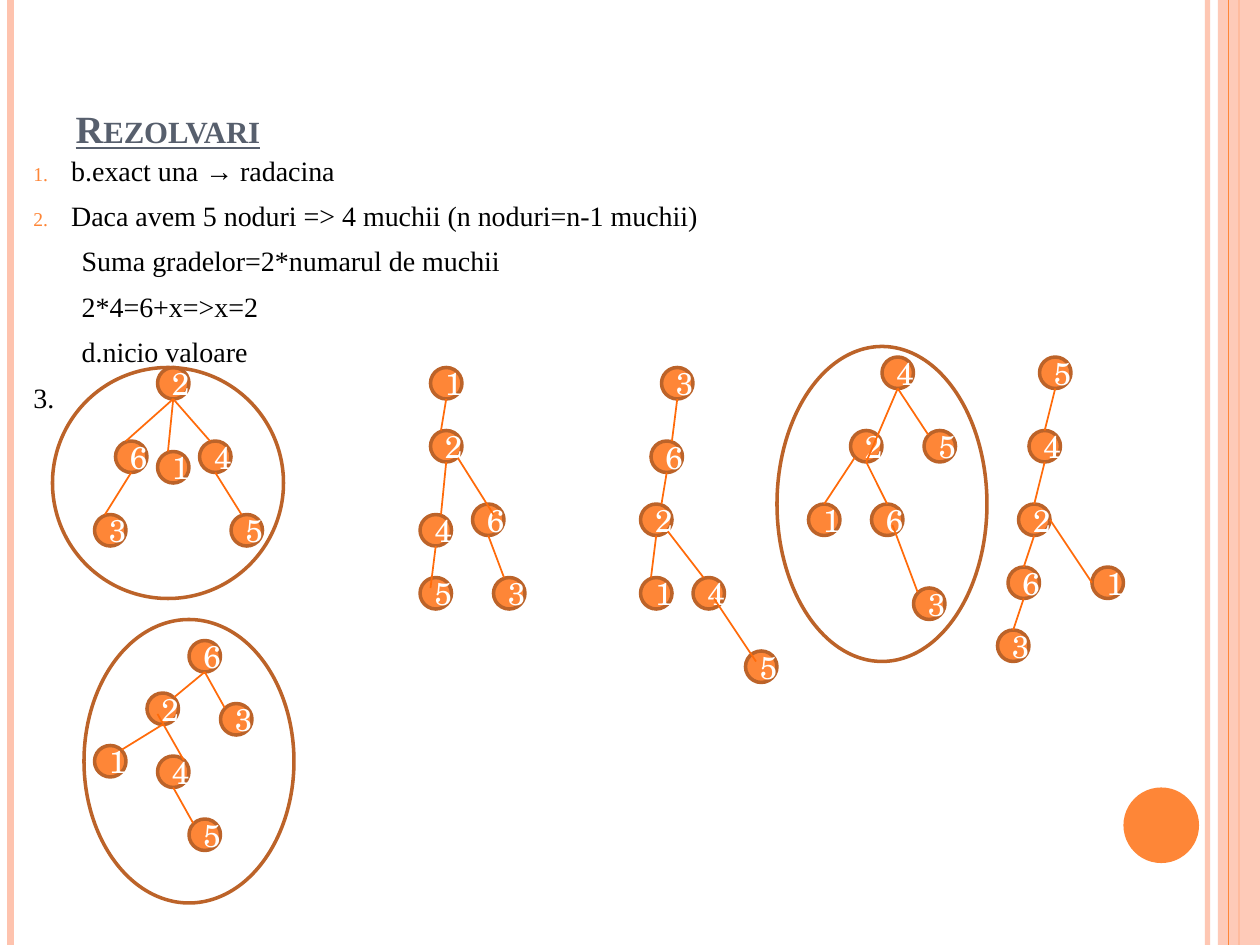
from lxml import etree
from pptx import Presentation
from pptx.dml.color import RGBColor
from pptx.enum.shapes import MSO_CONNECTOR, MSO_SHAPE
from pptx.enum.text import MSO_ANCHOR, PP_ALIGN
from pptx.oxml.ns import qn
from pptx.util import Pt

PX = 7620  # 120 px to the inch
STRAIGHT = MSO_CONNECTOR.STRAIGHT
ELLIPSE, RECTANGLE = MSO_SHAPE.OVAL, MSO_SHAPE.RECTANGLE
ORANGE, PEACH, BROWN, EDGE = "FE8637", "FEC3AE", "BC6329", "FF6B0A"
NODE = 30
SERIF, DIGITS = "Times New Roman", "TeX Gyre Schola"

prs = Presentation()
prs.slide_width, prs.slide_height = 1200 * PX, 900 * PX
slide = prs.slides.add_slide(prs.slide_layouts[5])


def draw_line(x1, y1, x2, y2, color, width):
    line = slide.shapes.add_connector(STRAIGHT, x1 * PX, y1 * PX, x2 * PX, y2 * PX)
    line.line.color.rgb = RGBColor.from_string(color)
    line.line.width = Pt(width)
    etree.SubElement(line._element.spPr, qn("a:effectLst"))
    return line


def draw_shape(kind, x, y, width, height, fill=None, outline=None):
    shape = slide.shapes.add_shape(kind, x * PX, y * PX, width * PX, height * PX)
    shape.shadow.inherit = False
    if fill:
        shape.fill.solid()
        shape.fill.fore_color.rgb = RGBColor.from_string(fill)
    else:
        shape.fill.background()
    if outline:
        shape.line.color.rgb = RGBColor.from_string(outline)
        shape.line.width = Pt(2)
    else:
        shape.line.fill.background()
    return shape


# Side stripes and corner disc
inner_stripe = draw_line(1150, 0, 1150, 900, PEACH, 3)
draw_line(10, 0, 10, 900, PEACH, 4.5)
draw_line(1180, 0, 1180, 900, ORANGE, 1.5)
band = draw_shape(RECTANGLE, 1160, 0, 40, 900, PEACH)
draw_line(1170, 0, 1170, 900, ORANGE, 0.75)
draw_shape(ELLIPSE, 1070, 750, 72, 72, ORANGE)
for stripe, opacity in ((inner_stripe, 93), (band, 87)):
    color = stripe._element.spPr.find(".//" + qn("a:srgbClr"))
    etree.SubElement(color, qn("a:alpha"), val=str(opacity * 1000))

# Title
title = slide.shapes.title
title.left, title.top, title.width, title.height = 60 * PX, 0, 1080 * PX, 150 * PX
title.text_frame.text = "Rezolvari"
title.text_frame.vertical_anchor = MSO_ANCHOR.BOTTOM
heading = title.text_frame.paragraphs[0]
heading.alignment = PP_ALIGN.LEFT
heading_font = heading.runs[0].font
heading_font.name, heading_font.size = SERIF, Pt(22)
heading_font.bold = heading_font.underline = True
heading_font.color.rgb = RGBColor.from_string("575F6D")
heading.runs[0]._r.get_or_add_rPr().set("cap", "small")

# Answers: text, left margin, first-line indent, numbered
answers = [
    ("b.exact una → radacina", 36, -36, True),
    ("Daca avem 5 noduri => 4 muchii (n noduri=n-1 muchii)", 36, -36, True),
    ("Suma gradelor=2*numarul de muchii", 46, 0, False),
    ("2*4=6+x=>x=2", 46, 0, False),
    ("d.nicio valoare", 46, 0, False),
    ("3.", 36, -36, False),
]
body = slide.shapes.add_textbox(20 * PX, 140 * PX, 1120 * PX, 740 * PX).text_frame
body.word_wrap = True
for index, (text, margin, indent, numbered) in enumerate(answers):
    answer = body.add_paragraph() if index else body.paragraphs[0]
    answer.text = text
    if index:
        answer.space_before = Pt(6.75)
    properties = answer._p.get_or_add_pPr()
    properties.set("marL", str(margin * PX))
    properties.set("indent", str(indent * PX))
    if numbered:
        number_color = etree.SubElement(properties, qn("a:buClr"))
        etree.SubElement(number_color, qn("a:srgbClr"), val=ORANGE)
        etree.SubElement(properties, qn("a:buSzPct"), val="70000")
        etree.SubElement(properties, qn("a:buFont"), typeface=SERIF)
        etree.SubElement(properties, qn("a:buAutoNum"), type="arabicPeriod")
    font = answer.runs[0].font
    font.name, font.size = SERIF, Pt(16)
    font.color.rgb = RGBColor.from_string("000000")

# Trees: nodes as (label, left, top), edges as (x1, y1, x2, y2)
trees = [
    ([(2, 150, 350), (6, 110, 420), (1, 150, 430), (4, 190, 420), (5, 220, 490),
      (3, 90, 490)],
     [(165, 380, 120, 420), (165, 380, 160, 430), (165, 380, 200, 420),
      (125, 450, 100, 490), (205, 450, 230, 490)]),
    ([(1, 410, 350), (2, 410, 410), (4, 400, 490), (6, 450, 480), (5, 400, 550),
      (3, 470, 550)],
     [(425, 380, 420, 410), (425, 440, 420, 490), (436, 436, 470, 490),
      (415, 520, 410, 560), (465, 510, 480, 550)]),
    ([(3, 630, 350), (6, 620, 420), (5, 710, 620), (1, 610, 550), (2, 610, 480),
      (4, 660, 550)],
     [(645, 380, 640, 420), (635, 450, 630, 480), (625, 510, 620, 550),
      (636, 506, 670, 550), (680, 570, 720, 630)]),
    ([(4, 840, 340), (1, 770, 480), (5, 880, 410), (2, 810, 410), (6, 830, 480),
      (3, 870, 560)],
     [(855, 370, 825, 440), (855, 370, 884, 414), (825, 440, 845, 480),
      (814, 436, 785, 480), (850, 500, 874, 564)]),
    ([(5, 990, 340), (4, 980, 410), (2, 970, 480), (1, 1040, 540), (3, 950, 600),
      (6, 960, 540)],
     [(1005, 370, 995, 410), (995, 440, 985, 480), (985, 510, 975, 540),
      (975, 570, 965, 600), (1000, 495, 1040, 555)]),
    ([(6, 180, 610), (2, 140, 660), (3, 210, 670), (4, 150, 720), (1, 90, 710),
      (5, 180, 780)],
     [(195, 640, 166, 664), (195, 640, 214, 674), (155, 690, 116, 714),
      (150, 680, 175, 724), (165, 750, 184, 784)]),
]
for nodes, edges in trees:
    for label, left, top in nodes:
        node = draw_shape(ELLIPSE, left, top, NODE, NODE, ORANGE, BROWN)
        node.text_frame.text = str(label)
        digit = node.text_frame.paragraphs[0]
        digit.alignment = PP_ALIGN.CENTER
        digit_font = digit.runs[0].font
        digit_font.name, digit_font.size = DIGITS, Pt(18)
        digit_font.color.rgb = RGBColor.from_string("FFFFFF")
    for edge in edges:
        draw_line(*edge, EDGE, 1)

# Rings around the chosen trees
for ring in ((50, 350, 220, 220), (740, 330, 200, 300), (80, 590, 200, 270)):
    draw_shape(ELLIPSE, *ring, outline=BROWN)

prs.save("out.pptx")
